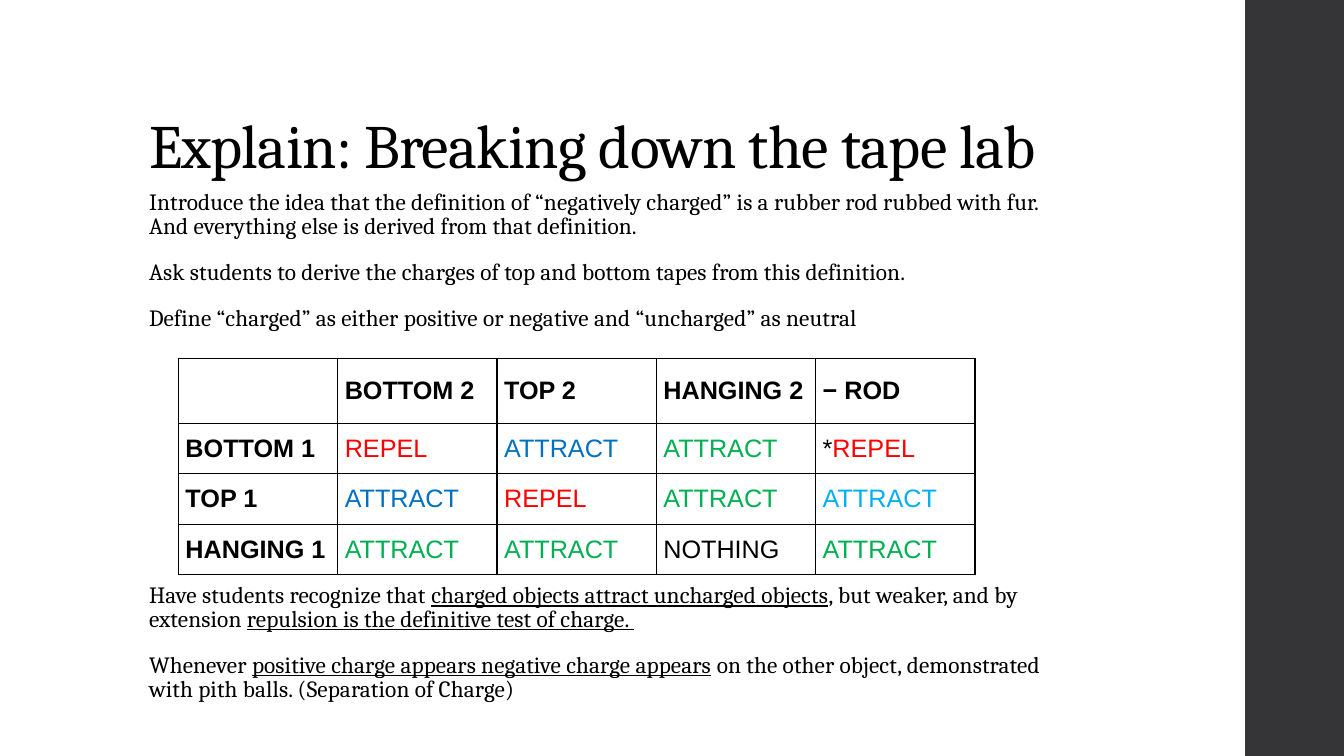
from lxml.etree import SubElement
from pptx import Presentation
from pptx.dml.color import RGBColor as RGB
from pptx.enum.shapes import MSO_SHAPE as Shape
from pptx.enum.text import MSO_ANCHOR as Anchor
from pptx.oxml import parse_xml
from pptx.oxml.ns import nsdecls, qn
from pptx.util import Inches, Pt

THEME = {
    "serif": "Cambria", "sans": "Arial",
    "title": 44, "body": 16.6, "table": 18,
    "black": "000000", "band": "353537", "red": "FF0000",
    "blue": "0070C0", "green": "00B050", "sky": "00B0F0",
}
TITLE = "Explain: Breaking down the tape lab"
INTRO = [
    [("Introduce the idea that the definition of “negatively charged” is a rubber rod "
      "rubbed with fur. And everything else is derived from that definition.", False)],
    [("Ask students to derive the charges of top and bottom tapes from this definition.", False)],
    [("Define “charged” as either positive or negative and “uncharged” as neutral", False)],
]
CONCLUSIONS = [
    [("Have students recognize that ", False),
     ("charged objects attract uncharged objects", True),
     (", but weaker, and by extension ", False),
     ("repulsion is the definitive test of charge. ", True)],
    [("Whenever ", False),
     ("positive charge appears negative charge appears", True),
     (" on the other object, demonstrated with pith balls. (Separation of Charge)", False)],
]
REPEL = [("REPEL", "red")]
OPPOSITE = [("ATTRACT", "blue")]
NEUTRAL = [("ATTRACT", "green")]
ROD_PULL = [("ATTRACT", "sky")]
ROD_PUSH = [("*", "black")] + REPEL
NOTHING = [("NOTHING", "black")]
COLUMNS = ["BOTTOM 2", "TOP 2", "HANGING 2", "− ROD"]
RESULTS = {
    "BOTTOM 1": [REPEL, OPPOSITE, NEUTRAL, ROD_PUSH],
    "TOP 1": [OPPOSITE, REPEL, NEUTRAL, ROD_PULL],
    "HANGING 1": [NEUTRAL, NEUTRAL, NOTHING, NEUTRAL],
}
COLUMN_WIDTH, HEADER_HEIGHT, ROW_HEIGHT = 1.58, 0.64, 0.49


def color(name):
    return RGB.from_string(THEME[name])


def style_font(font, face, size):
    font.name = THEME[face]
    font.size = Pt(THEME[size])
    font.color.rgb = color("black")


def add_text(page, place, paragraphs, size, line_spacing, tracking, anchor=Anchor.TOP):
    frame = page.shapes.add_textbox(*map(Inches, place)).text_frame
    frame.word_wrap = True
    frame.vertical_anchor = anchor
    for index, spans in enumerate(paragraphs):
        para = frame.add_paragraph() if index else frame.paragraphs[0]
        style_font(para.font, "serif", size)
        para.line_spacing = line_spacing
        if index:
            para.space_before = Pt(14)
        para.space_after = Pt(2)
        for words, underlined in spans:
            span = para.add_run()
            span.text = words
            span.font.underline = underlined
            span.font._element.set("spc", str(tracking))


def add_borders(cell):
    properties = cell._tc.get_or_add_tcPr()
    for side in ("lnL", "lnR", "lnT", "lnB"):
        line = parse_xml(f'<a:{side} {nsdecls("a")} w="{Pt(1)}"/>')
        fill = SubElement(line, qn("a:solidFill"))
        SubElement(fill, qn("a:srgbClr"), val=THEME["black"])
        properties.append(line)


def fill_cell(cell, spans, bold):
    cell.margin_left = cell.margin_right = Inches(0.07)
    cell.margin_top = cell.margin_bottom = Inches(0.1)
    cell.vertical_anchor = Anchor.MIDDLE
    add_borders(cell)
    cell.fill.background()
    para = cell.text_frame.paragraphs[0]
    style_font(para.font, "sans", "table")
    para.font.bold = bold
    for words, tone in spans:
        span = para.add_run()
        span.text = words
        span.font.color.rgb = color(tone)


def add_results(page):
    header = [[]] + [[(name, "black")] for name in COLUMNS]
    rows = [header] + [[[(name, "black")]] + cells for name, cells in RESULTS.items()]
    size = COLUMN_WIDTH * len(header), HEADER_HEIGHT + ROW_HEIGHT * len(RESULTS)
    table = page.shapes.add_table(
        len(rows), len(header), *map(Inches, (1.77, 3.56, *size))).table
    table.first_row = table.horz_banding = False
    for column in table.columns:
        column.width = Inches(COLUMN_WIDTH)
    for row, cells in enumerate(rows):
        table.rows[row].height = Inches(ROW_HEIGHT if row else HEADER_HEIGHT)
        for column, spans in enumerate(cells):
            fill_cell(table.cell(row, column), spans, row == 0 or column == 0)


def main():
    deck = Presentation()
    deck.slide_width, deck.slide_height = Inches(13.33), Inches(7.5)
    page = deck.slides.add_slide(deck.slide_layouts[6])
    band = page.shapes.add_shape(
        Shape.RECTANGLE, *map(Inches, (12.35, 0, 0.98, 7.5)))
    band.shadow.inherit = False
    band.fill.solid()
    band.fill.fore_color.rgb = color("band")
    band.line.fill.background()
    add_text(page, (1.38, 0.4, 10.6, 1.45), [[(TITLE, False)]],
             "title", 0.9, -50, Anchor.BOTTOM)
    add_text(page, (1.38, 1.85, 9.4, 1.6), INTRO, "body", 0.85, 10)
    add_text(page, (1.38, 5.75, 9.4, 1.38), CONCLUSIONS, "body", 0.85, 10)
    add_results(page)
    deck.save("out.pptx")


if __name__ == "__main__":
    main()
